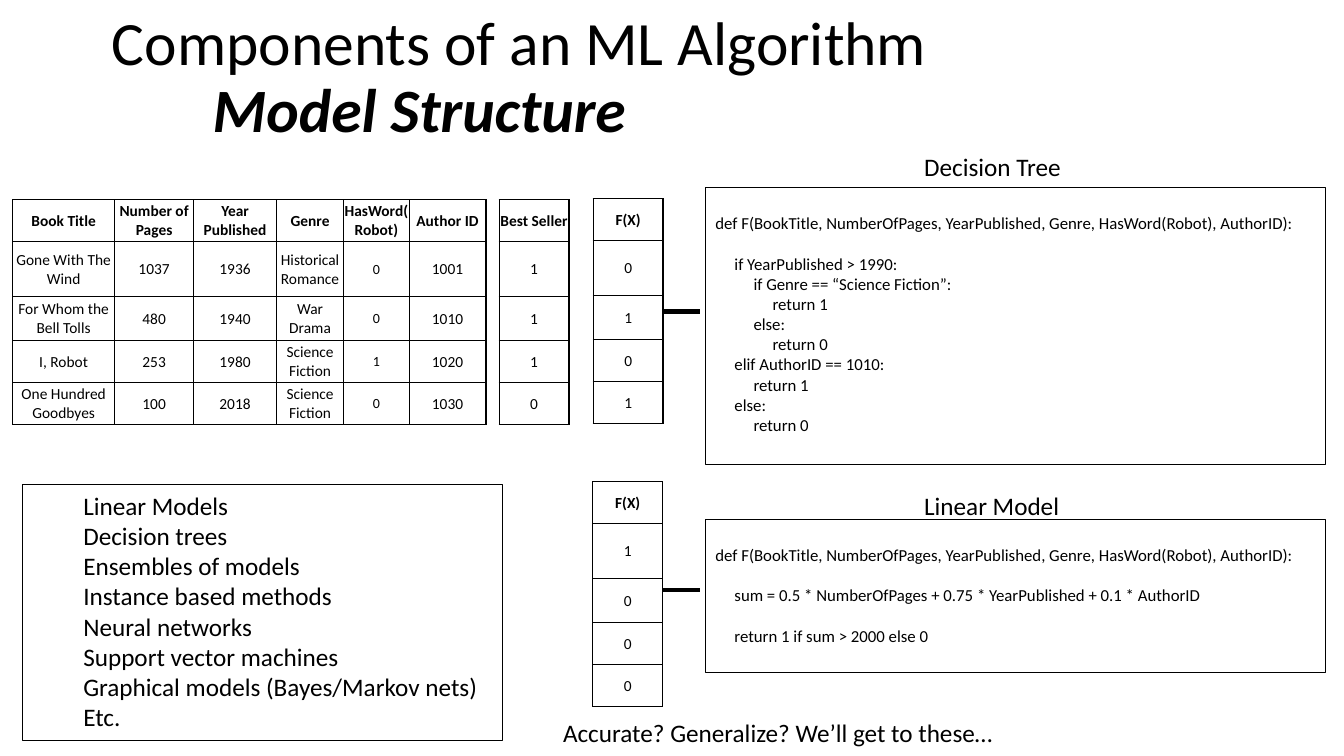
import pptx
import pptx.dml.color
import pptx.enum.shapes
import pptx.enum.text
import pptx.oxml
import pptx.oxml.ns
import pptx.util
from pptx.util import Cm

BLACK = pptx.dml.color.RGBColor(0x00, 0x00, 0x00)
FONT = "Calibri"
CODE_SIZE = 12
CODE_INDENT = 0.48
CODE_LINE = 14.6
CENTER = pptx.enum.text.PP_ALIGN.CENTER
MIDDLE = pptx.enum.text.MSO_ANCHOR.MIDDLE
ROW_HEIGHTS = [1.06, 1.38, 1.11, 1.06, 1.06]


def write(frame, text, size=18, bold=False, italic=False, align=None,
          indent=0, before=0, spacing=1.0):
    """Append one formatted paragraph; the first call fills the empty one."""
    para = frame.add_paragraph() if frame.text else frame.paragraphs[0]
    para.alignment = align
    para.line_spacing = spacing
    para.space_before = pptx.util.Pt(before)
    if indent:
        properties = para._p.get_or_add_pPr()
        properties.set("marL", str(Cm(indent)))
        properties.set("indent", "0")
    span = para.add_run()
    span.text = text
    span.font.name = FONT
    span.font.size = pptx.util.Pt(size)
    span.font.bold = bold
    span.font.italic = italic
    span.font.color.rgb = BLACK


def add_grid(left, top, widths, rows, small_column=None):
    """Add a bordered table with a bold header and one smaller-type column."""
    table = page.shapes.add_table(
        len(rows), len(widths), Cm(left), Cm(top),
        Cm(sum(widths)), Cm(sum(ROW_HEIGHTS))).table
    table.first_row = False
    table.horz_banding = False
    for column, width in zip(table.columns, widths):
        column.width = Cm(width)
    for r, (row, height) in enumerate(zip(rows, ROW_HEIGHTS)):
        table.rows[r].height = Cm(height)
        for c, text in enumerate(row):
            cell = table.cell(r, c)
            cell.margin_left = cell.margin_right = cell.margin_top = Cm(0.02)
            cell.margin_bottom = 0
            cell.vertical_anchor = MIDDLE
            for side in ("lnL", "lnR", "lnT", "lnB"):
                cell._tc.get_or_add_tcPr().append(pptx.oxml.parse_xml(
                    f'<a:{side} {pptx.oxml.ns.nsdecls("a")} w="12700"><a:solidFill>'
                    f'<a:srgbClr val="{BLACK}"/></a:solidFill></a:{side}>'))
            cell.fill.background()
            size = 10 if r and c == small_column else 11
            write(cell.text_frame, text, size=size, bold=r == 0, align=CENTER)


deck = pptx.Presentation()
deck.slide_width = Cm(33.87)
deck.slide_height = Cm(19.05)
page = deck.slides.add_slide(deck.slide_layouts[6])

# Title
title = page.shapes.add_textbox(Cm(2.57), Cm(0.15), Cm(29.21), Cm(3.68)).text_frame
title.word_wrap = True
title.vertical_anchor = MIDDLE
write(title, "Components of an ML Algorithm", size=44, spacing=0.9)
write(title, "Model Structure", size=44, bold=True, italic=True,
      indent=2.54, spacing=0.9)

# Training data, labels and predictions
books = [
    ["Book Title", "Number of Pages", "Year Published", "Genre", "HasWord(Robot)", "Author ID"],
    ["Gone With The Wind", "1037", "1936", "Historical Romance", "0", "1001"],
    ["For Whom the Bell Tolls", "480", "1940", "War Drama", "0", "1010"],
    ["I, Robot", "253", "1980", "Science Fiction", "1", "1020"],
    ["One Hundred Goodbyes", "100", "2018", "Science Fiction", "0", "1030"],
]
add_grid(0.32, 5.03, [2.57, 1.99, 2.09, 1.69, 1.65, 1.94], books, small_column=4)
for left, top, heading, values in [
    (12.58, 5.03, "Best Seller", "1110"),
    (14.95, 5.01, "F(X)", "0101"),
    (14.94, 12.14, "F(X)", "1000"),
]:
    add_grid(left, top, [1.76], [[heading], *values])

# Model code: (indent level, blank lines above, text)
signature = (0, 0, "def F(BookTitle, NumberOfPages, YearPublished, Genre, HasWord(Robot), AuthorID):")
tree_code = [
    signature,
    (1, 1, "if YearPublished > 1990:"),
    (2, 0, "if Genre == “Science Fiction”:"),
    (3, 0, "return 1"),
    (2, 0, "else:"),
    (3, 0, "return 0"),
    (1, 0, "elif AuthorID == 1010:"),
    (2, 0, "return 1"),
    (1, 0, "else:"),
    (2, 0, "return 0"),
]
linear_code = [
    signature,
    (1, 1, "sum = 0.5 * NumberOfPages + 0.75 * YearPublished + 0.1 * AuthorID"),
    (1, 1, "return 1 if sum > 2000 else 0"),
]
methods = [
    "Linear Models", "Decision trees", "Ensembles of models",
    "Instance based methods", "Neural networks", "Support vector machines",
    "Graphical models (Bayes/Markov nets)", "Etc.",
]

# Outlined boxes
frames = []
for left, top, width, height in [
    (17.78, 4.72, 15.62, 6.98),
    (17.78, 13.08, 15.62, 3.88),
    (0.58, 12.22, 12.09, 6.45),
]:
    box = page.shapes.add_shape(pptx.enum.shapes.MSO_SHAPE.RECTANGLE,
                                Cm(left), Cm(top), Cm(width), Cm(height))
    box.shadow.inherit = False
    box.fill.background()
    box.line.color.rgb = BLACK
    box.line.width = pptx.util.Pt(0.75)
    box.text_frame.word_wrap = True
    box.text_frame.vertical_anchor = pptx.enum.text.MSO_ANCHOR.TOP
    frames.append(box.text_frame)

LEFT = pptx.enum.text.PP_ALIGN.LEFT
for frame, code in zip(frames, [tree_code, linear_code]):
    frame.margin_top = Cm(0.64)
    for level, blanks, text in code:
        write(frame, text, size=CODE_SIZE, align=LEFT,
              indent=level * CODE_INDENT, before=blanks * CODE_LINE)
for method in methods:
    write(frames[2], method, align=LEFT, indent=1.27)

# Captions
for left, top, width, text in [
    (23.04, 3.68, 3.99, "Decision Tree"),
    (23.04, 12.22, 3.96, "Linear Model"),
    (13.94, 17.96, 11.48, "Accurate? Generalize? We’ll get to these…"),
]:
    caption = page.shapes.add_textbox(Cm(left), Cm(top), Cm(width), Cm(1.02)).text_frame
    caption.word_wrap = False
    write(caption, text)

# Links from predictions to code
for y in (7.85, 14.86):
    link = page.shapes.add_connector(pptx.enum.shapes.MSO_CONNECTOR.STRAIGHT,
                                     Cm(16.71), Cm(y), Cm(17.65), Cm(y))
    link.line.color.rgb = BLACK
    link.line.width = pptx.util.Pt(3)
    link._element.spPr.append(pptx.oxml.parse_xml(
        f'<a:effectLst {pptx.oxml.ns.nsdecls("a")}/>'))

deck.save("out.pptx")
